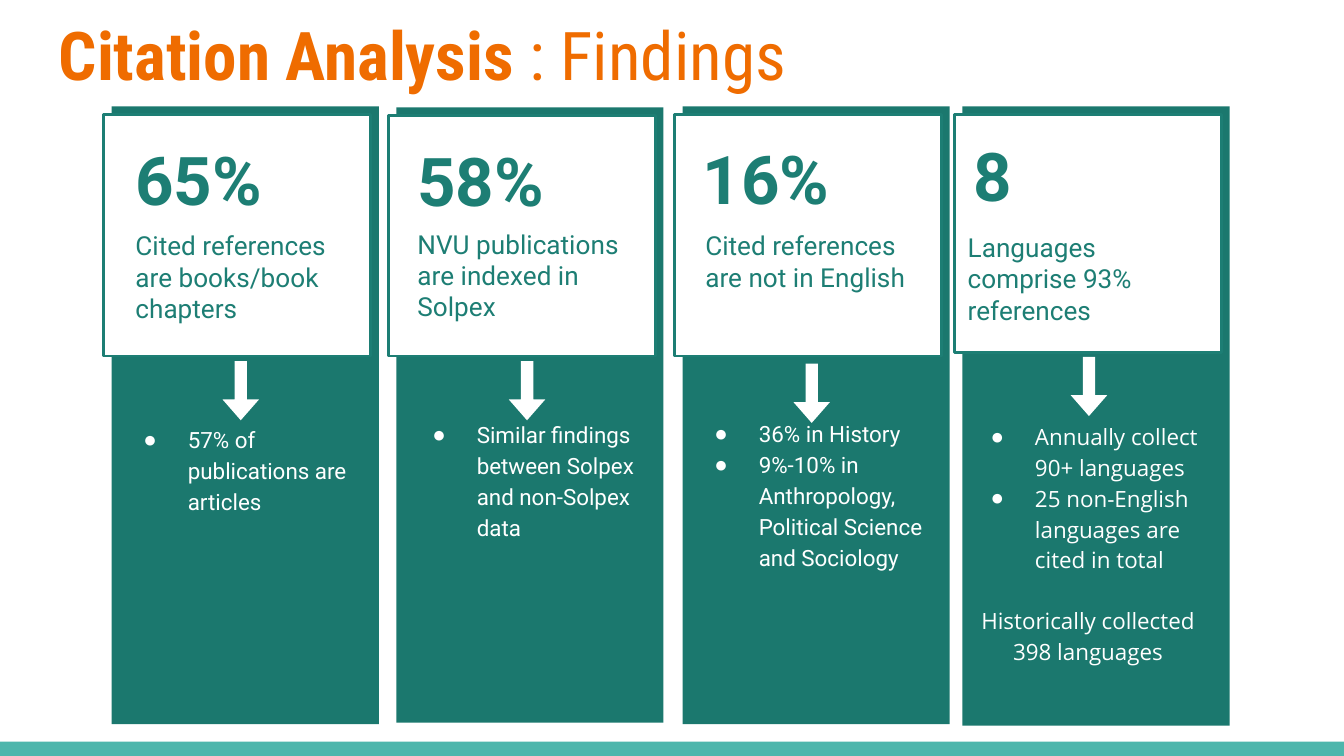
from lxml.etree import SubElement
from pptx import Presentation
from pptx.dml.color import RGBColor
from pptx.enum.shapes import MSO_SHAPE
from pptx.enum.text import MSO_ANCHOR, MSO_AUTO_SIZE, PP_ALIGN
from pptx.oxml.ns import qn
from pptx.util import Cm, Pt

COLORS = {
    "white": "FFFFFF",
    "panel": "1B786E",
    "teal": "1D7E74",
    "orange": "EF6C00",
    "bar": "4DB6AC",
}

COLUMNS = [
    {
        "box": (2.11, 2.01, 5.05, 11.68), "card": 4.57,
        "big": "65%", "num": (0.2, 0.36),
        "label": "Cited references are books/book chapters",
        "text": (0.2, 2.08, 4.52, 2.18),
        "arrow": (1.88, 5.03), "list": (-0.08, 5.72, 5.05, 5.46),
        "font": "Roboto", "items": ["57% of publications are articles"],
    },
    {
        "box": (7.49, 2.03, 5.05, 11.63), "card": 4.55,
        "big": "58%", "num": (0.15, 0.36),
        "label": "NVU publications are indexed in Solpex",
        "text": (0.15, 2.03, 4.52, 2.34),
        "arrow": (1.91, 5.01), "list": (0, 5.61, 5.05, 5.54),
        "font": "Roboto",
        "items": ["Similar findings between Solpex and non-Solpex data"],
    },
    {
        "box": (12.9, 2.01, 5.05, 11.68), "card": 4.57,
        "big": "16%", "num": (0.13, 0.33),
        "label": "Cited references are not in English",
        "text": (0.18, 2.08, 4.52, 2.26),
        "arrow": (1.88, 5.08), "list": (-0.08, 5.61, 5.05, 5.18),
        "font": "Roboto",
        "items": [
            "36% in History",
            "9%-10% in Anthropology, Political Science and Sociology",
        ],
    },
    {
        "box": (18.19, 2.01, 5.05, 11.71), "card": 4.5,
        "big": "8", "num": (-0.05, 0.28),
        "label": "Languages comprise 93% references",
        "text": (-0.15, 2.11, 4.85, 2.36),
        "arrow": (1.83, 4.95), "list": (-0.15, 5.66, 5.05, 5.99),
        "font": "Open Sans",
        "items": [
            "Annually collect 90+ languages",
            "25 non-English languages are cited in total",
        ],
        "note": "Historically collected 398 languages",
    },
]


def color(name):
    return RGBColor.from_string(COLORS[name])


def style(run, font, size, tint, bold=False):
    run.font.name = font
    run.font.size = Pt(size)
    run.font.bold = bold
    run.font.color.rgb = color(tint)


def set_frame(frame):
    frame.word_wrap = True
    frame.auto_size = MSO_AUTO_SIZE.NONE
    frame.vertical_anchor = MSO_ANCHOR.TOP
    frame.margin_left = frame.margin_right = Cm(0.25)
    frame.margin_top = frame.margin_bottom = Cm(0.25)


def place(shape, box):
    shape.left, shape.top, shape.width, shape.height = map(Cm, box)


def add_block(shapes, kind, box, fill, line=None):
    block = shapes.add_shape(kind, *map(Cm, box))
    block.shadow.inherit = False
    block.fill.solid()
    block.fill.fore_color.rgb = color(fill)
    if line:
        block.line.color.rgb = color(line)
        block.line.width = Pt(1.5)
    else:
        block.line.fill.background()
    return block


def add_text(shapes, box, text, size, bold=False):
    frame = shapes.add_textbox(*map(Cm, box)).text_frame
    set_frame(frame)
    frame.text = text
    style(frame.paragraphs[0].runs[0], "Roboto", size, "teal", bold)


def set_bullet(para, shown):
    props = para._p.get_or_add_pPr()
    props.set("marL", str(Cm(1.27) if shown else 0))
    props.set("indent", str(Cm(-0.84) if shown else 0))
    if shown:
        tint = SubElement(props, qn("a:buClr"))
        SubElement(tint, qn("a:srgbClr"), val=COLORS["white"])
        SubElement(props, qn("a:buChar"), char="●")
    else:
        SubElement(props, qn("a:buNone"))


def fill_list(body, box, data):
    place(body, box)
    frame = body.text_frame
    set_frame(frame)
    note = data.get("note")
    lines = data["items"] + ([note] if note else [])
    frame.text = "\n".join(lines)
    for para in frame.paragraphs:
        last = para.text == note
        para.alignment = PP_ALIGN.CENTER if last else PP_ALIGN.LEFT
        para.line_spacing = 1.15
        para.space_before = para.space_after = Pt(16 if last else 0)
        set_bullet(para, not last)
        style(para.runs[0], data["font"], 12, "white")


def add_column(slide, body, data):
    left, top, width, height = data["box"]

    def inside(dx, dy, wide, high):
        return left + dx, top + dy, wide, high

    group = slide.shapes.add_group_shape()
    shapes = group.shapes
    add_block(shapes, MSO_SHAPE.RECTANGLE, data["box"], "panel")
    card = inside(-0.15, 0.15, width, data["card"])
    add_block(shapes, MSO_SHAPE.RECTANGLE, card, "white", "teal")
    add_text(shapes, inside(*data["text"]), data["label"], 14)
    add_text(shapes, inside(*data["num"], 4.52, 1.93), data["big"], 36, True)
    arrow = add_block(shapes, MSO_SHAPE.RIGHT_ARROW,
                      inside(*data["arrow"], 1.12, 0.69), "white")
    arrow.rotation = 90
    arrow.adjustments[0] = 0.34
    arrow.adjustments[1] = 0.57
    fill_list(body, inside(*data["list"]), data)
    group.element.addnext(body.element)


def add_title(slide, box):
    title = slide.shapes.title
    place(title, box)
    set_frame(title.text_frame)
    para = title.text_frame.paragraphs[0]
    para.alignment = PP_ALIGN.LEFT
    for text, bold in (("Citation Analysis", True), (" : Findings", False)):
        run = para.add_run()
        run.text = text
        style(run, "Roboto Condensed", 36, "orange", bold)


def main():
    deck = Presentation()
    deck.slide_width, deck.slide_height = Cm(25.4), Cm(14.29)
    slide = deck.slides.add_slide(deck.slide_layouts[4])
    bodies = [item for item in slide.placeholders
              if item.placeholder_format.idx > 0]
    add_block(slide.shapes, MSO_SHAPE.RECTANGLE, (0, 14.02, 25.4, 0.27), "bar")
    add_title(slide, (0.86, 0, 23.67, 1.96))
    for body, data in zip(bodies, COLUMNS):
        add_column(slide, body, data)
    deck.save("out.pptx")


if __name__ == "__main__":
    main()
